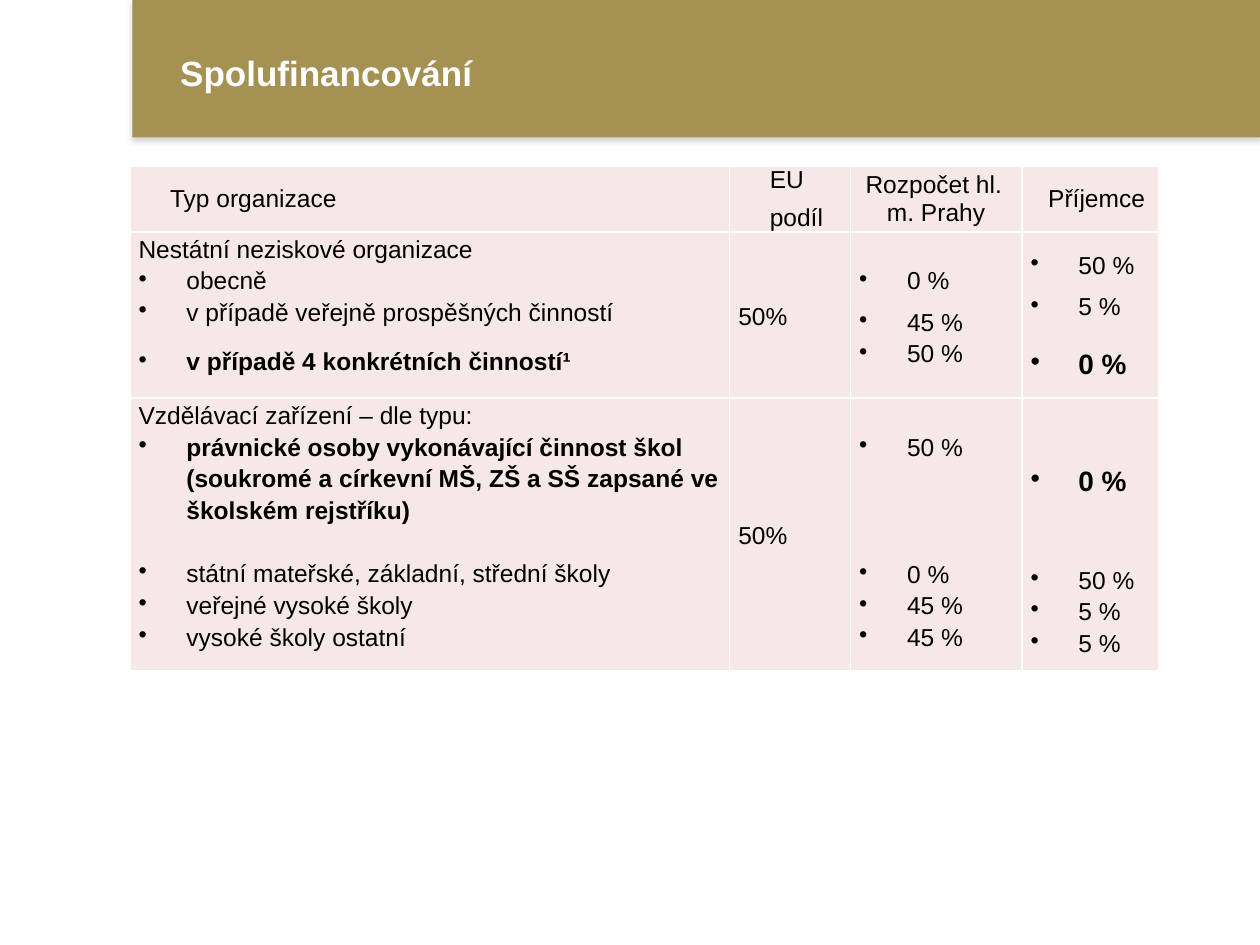
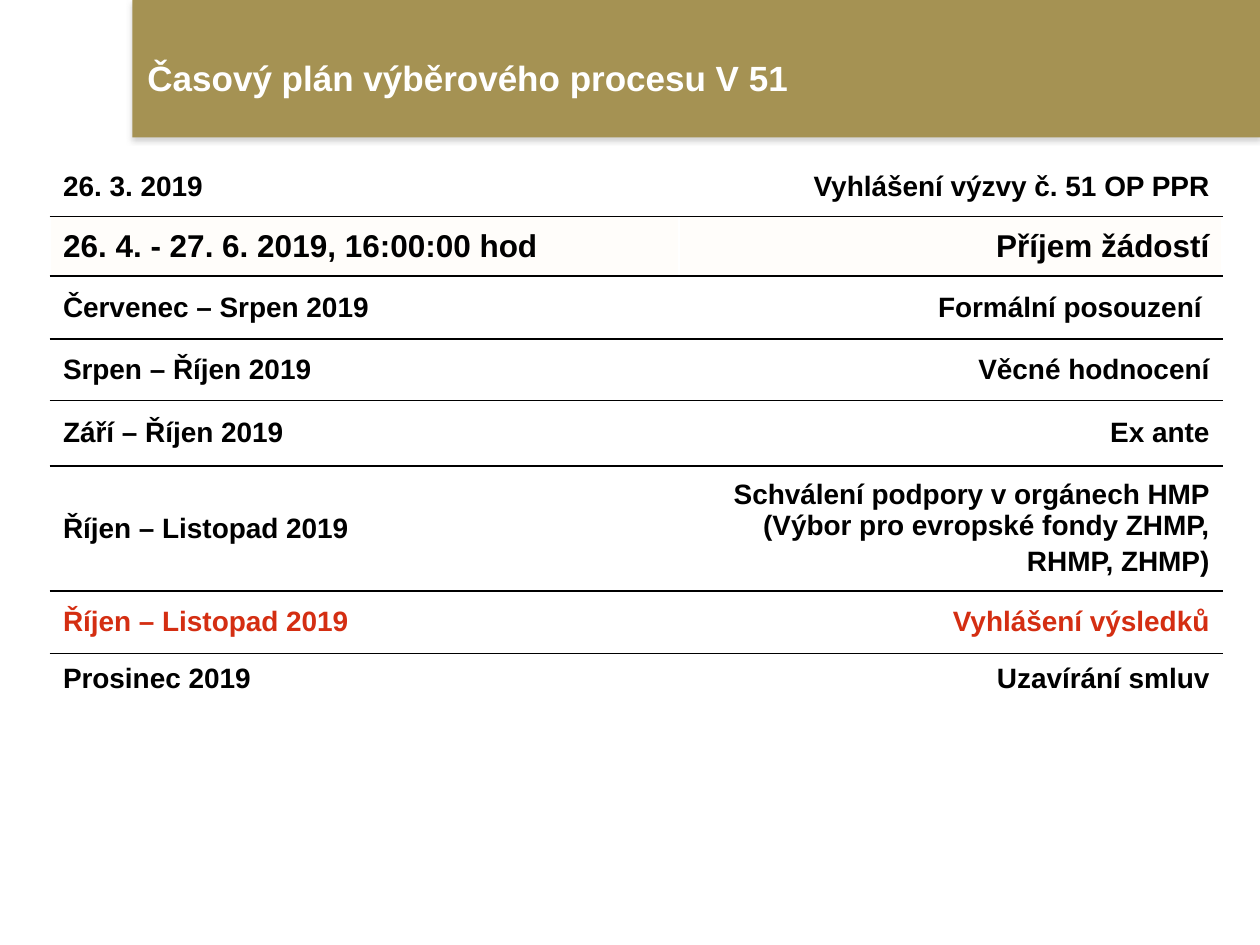
import dataclasses
import lxml.etree
import pptx
import pptx.dml.color
import pptx.enum.shapes
import pptx.enum.text
import pptx.oxml.ns
import pptx.util

ALIGN = pptx.enum.text.PP_ALIGN
MIDDLE = pptx.enum.text.MSO_ANCHOR.MIDDLE
TOP = pptx.enum.text.MSO_ANCHOR.TOP
WIDE, HIGH = 10, 7.5
COLS, ROWS = 100, 75


@dataclasses.dataclass(frozen=True)
class Theme:
    font: str = "Arial"
    gold: str = "A59253"
    pink: str = "F7E8E8"
    cream: str = "FFFDFA"
    white: str = "FFFFFF"
    black: str = "000000"
    red: str = "D42E12"
    shade: str = "808080"
    title: int = 20
    big: int = 18
    mid: int = 16
    small: int = 14


THEME = Theme()


@dataclasses.dataclass
class Line:
    text: str
    size: int = THEME.small
    bold: bool = False
    color: str = THEME.black
    align: object = ALIGN.LEFT
    dot: bool = False
    left: float = 0
    hang: float = 0
    lead: float = 1.0
    before: float = 0
    after: float = 0


@dataclasses.dataclass
class Cell:
    lines: list
    anchor: object = TOP
    drop: float = 0


def inch(size):
    return pptx.util.Inches(size)


def place(box):
    left, top, wide, high = box
    across, down = WIDE / COLS, HIGH / ROWS
    return [inch(left * across), inch(top * down), inch(wide * across), inch(high * down)]


def tint(code):
    return pptx.dml.color.RGBColor.from_string(code)


def node(parent, tag, **attrs):
    child = lxml.etree.SubElement(parent, pptx.oxml.ns.qn(tag))
    for key, value in attrs.items():
        child.set(key, str(value))
    return child


def write(par, line):
    props = par._p.get_or_add_pPr()
    props.set("marL", str(inch(line.left)))
    props.set("indent", str(inch(line.hang)))
    if line.dot:
        node(props, "a:buChar", char="•")
    par.alignment = line.align
    par.line_spacing = line.lead
    par.space_before = pptx.util.Pt(line.before)
    par.space_after = pptx.util.Pt(line.after)
    run = par.add_run()
    run.text = line.text
    font = run.font
    font.name, font.size, font.bold = THEME.font, pptx.util.Pt(line.size), line.bold
    font.color.rgb = tint(line.color)


def fill_text(frame, lines):
    for index, line in enumerate(lines):
        write(frame.add_paragraph() if index else frame.paragraphs[0], line)


def edge(cell, sides, color):
    props = cell._tc.get_or_add_tcPr()
    for side in sides:
        rule = node(props, "a:ln" + side, w=pptx.util.Pt(1))
        node(node(rule, "a:solidFill"), "a:srgbClr", val=color)


def add_band(slide, box):
    band = slide.shapes.add_shape(pptx.enum.shapes.MSO_SHAPE.RECTANGLE, *place(box))
    band.fill.solid()
    band.fill.fore_color.rgb = tint(THEME.gold)
    band.line.fill.background()
    band.shadow.inherit = False
    effects = band._element.spPr.find(pptx.oxml.ns.qn("a:effectLst"))
    cast = node(effects, "a:outerShdw", blurRad=pptx.util.Pt(3.1),
                dist=pptx.util.Pt(1.8), dir=90 * 60000, rotWithShape=0)
    node(node(cast, "a:srgbClr", val=THEME.shade), "a:alpha", val=35000)
    slide.shapes._spTree.insert(2, band._element)


def add_page(deck, text, box):
    slide = deck.slides.add_slide(deck.slide_layouts[5])
    title = slide.shapes.title
    title.left, title.top, title.width, title.height = place(box)
    frame = title.text_frame
    frame.word_wrap = True
    frame.auto_size = pptx.enum.text.MSO_AUTO_SIZE.NONE
    frame.vertical_anchor = MIDDLE
    write(frame.paragraphs[0], Line(text, THEME.title, True, THEME.white))
    add_band(slide, (10.5, 0, 89.5, 10.9))
    return slide


def add_grid(slide, box, wides, highs):
    spot = place(box)
    grid = slide.shapes.add_table(len(highs), len(wides), *spot).table
    grid.first_row = grid.horz_banding = False
    for col, share in zip(grid.columns, wides):
        col.width = int(spot[2] * share / sum(wides))
    for row, share in zip(grid.rows, highs):
        row.height = int(spot[3] * share / sum(highs))
    return grid


def set_cell(cell, lines, anchor, side, top, base):
    cell.margin_left = cell.margin_right = inch(side)
    cell.margin_top, cell.margin_bottom = inch(top), inch(base)
    cell.vertical_anchor = anchor
    fill_text(cell.text_frame, lines)


def head(*words, left=0.69, hang=-0.44):
    return Cell([Line(word, left=left, hang=hang, after=6) for word in words], MIDDLE)


def plain(text):
    return Line(text, lead=1.15)


def item(text, lead=1.15, **style):
    return Line(text, dot=True, left=0.38, hang=-0.38, lead=lead, **style)


def fund_rows():
    half = Cell([plain("50%")], MIDDLE)
    strong = {"size": THEME.mid, "bold": True}
    return [
        [head("Typ organizace"), head("EU", "podíl"),
         head("Rozpočet hl. m. Prahy", left=0.22, hang=-0.17),
         head("Příjemce", hang=-0.55)],
        [Cell([plain("Nestátní neziskové organizace"),
               item("obecně"),
               item("v případě veřejně prospěšných činností", after=10),
               item("v případě 4 konkrétních činností¹", bold=True, after=10)]),
         half,
         Cell([item("0 %"), item("45 %", 1.5), item("50 %")], drop=0.25),
         Cell([item("50 %"), item("5 %", 1.5), item("0 %", before=13.5, **strong)],
              drop=0.13)],
        [Cell([plain("Vzdělávací zařízení – dle typu:"),
               item("právnické osoby vykonávající činnost škol (soukromé a církevní "
                    "MŠ, ZŠ a SŠ zapsané ve školském rejstříku)", bold=True),
               item("státní mateřské, základní, střední školy", before=18),
               item("veřejné vysoké školy"),
               item("vysoké školy ostatní")]),
         half,
         Cell([item("50 %"), item("0 %", before=54.5), item("45 %"), item("45 %")],
              drop=0.25),
         Cell([item("0 %", **strong), item("50 %", before=37.5), item("5 %"), item("5 %")],
              drop=0.5)],
    ]


def fund_page(deck):
    slide = add_page(deck, "Spolufinancování", (13.3, 4, 81.7, 3.5))
    grid = add_grid(slide, (10.3, 13.2, 81.7, 39.7),
                    (4.76, 0.96, 1.36, 1.09), (0.49, 1.32, 2.16))
    for row, parts in zip(grid.rows, fund_rows()):
        for cell, part in zip(row.cells, parts):
            set_cell(cell, part.lines, part.anchor, 0.07, part.drop, 0)
            edge(cell, "LRTB", THEME.white)
            cell.fill.solid()
            cell.fill.fore_color.rgb = tint(THEME.pink)


PLAN = [
    ("26. 3. 2019", ["Vyhlášení výzvy č. 51 OP PPR"], {}),
    ("26. 4. - 27. 6. 2019, 16:00:00 hod", ["Příjem žádostí"], {"size": THEME.big}),
    ("Červenec – Srpen 2019", ["Formální posouzení "], {}),
    ("Srpen – Říjen 2019", ["Věcné hodnocení"], {}),
    ("Září – Říjen 2019", ["Ex ante"], {}),
    ("Říjen – Listopad 2019",
     ["Schválení podpory v orgánech HMP (Výbor pro evropské fondy ZHMP,", "RHMP, ZHMP)"], {}),
    ("Říjen – Listopad 2019", ["Vyhlášení výsledků"], {"color": THEME.red}),
    ("Prosinec 2019", ["Uzavírání smluv"], {}),
]


def plan_page(deck):
    slide = add_page(deck, "Časový plán výběrového procesu V 51", (10.7, -1.1, 86.2, 14.5))
    grid = add_grid(slide, (4, 12.4, 93, 43.5), (4.99, 4.31),
                    (0.48, 0.47, 0.5, 0.49, 0.52, 0.99, 0.5, 0.4))
    for index, (date, steps, style) in enumerate(PLAN):
        look = {"size": THEME.mid, "bold": True, **style}
        sides = ("T" if index else "") + ("B" if index < len(PLAN) - 1 else "")
        right = [Line(step, align=ALIGN.RIGHT, before=3.2 if spot else 0, **look)
                 for spot, step in enumerate(steps)]
        for cell, lines in zip(grid.rows[index].cells, ([Line(date, **look)], right)):
            set_cell(cell, lines, MIDDLE, 0.1, 0.05, 0.05)
            edge(cell, sides, THEME.black)
            cell.fill.solid()
            cell.fill.fore_color.rgb = tint(
                THEME.cream if look["size"] == THEME.big else THEME.white)


def main():
    deck = pptx.Presentation()
    deck.slide_width, deck.slide_height = inch(WIDE), inch(HIGH)
    fund_page(deck)
    plan_page(deck)
    deck.save("out.pptx")


if __name__ == "__main__":
    main()
